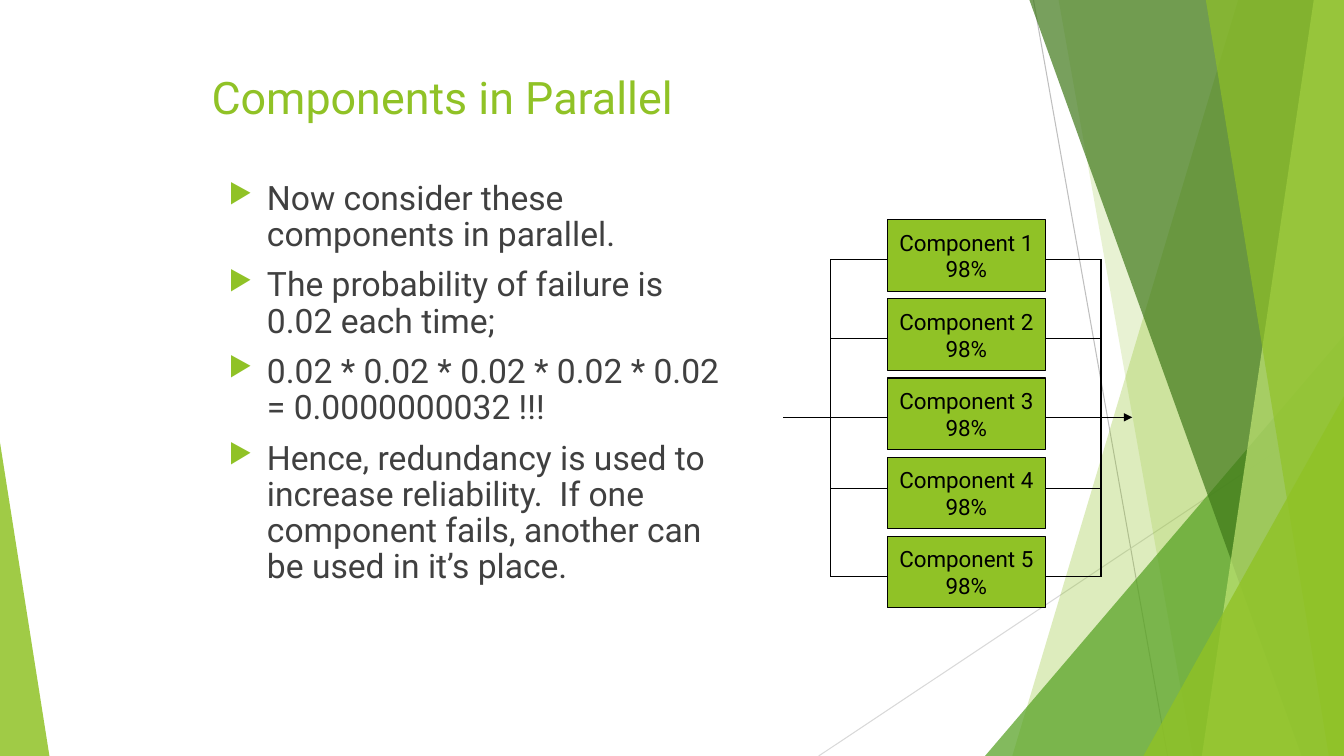
"""Build the slide on components in parallel."""
from dataclasses import dataclass

from lxml import etree
from pptx import Presentation
from pptx import util as u
from pptx.dml.color import RGBColor
from pptx.enum import shapes, text
from pptx.oxml import ns


@dataclass(frozen=True)
class Theme:
    """Colours, font and type sizes."""
    font: str = "Roboto"
    lime: str = "90C226"
    pale: str = "C0E474"
    leaf: str = "54A021"
    moss: str = "3F7819"
    ink: str = "000000"
    body: str = "404040"
    rule: str = "BFBFBF"
    faint: str = "D9D9D9"
    head: int = 32
    item: int = 24
    label: int = 16
    line: float = 0.75


def rgb(hue):
    """Turn a hex string into a colour."""
    return RGBColor.from_string(hue)


def add(node, tag, **attrs):
    """Append a DrawingML element."""
    return etree.SubElement(node, ns.qn(tag), attrs)


class Deck:
    """Hold the theme and the current slide."""

    def __init__(self, theme):
        """Open a wide deck with one blank slide."""
        self.theme = theme
        self.prs = Presentation()
        self.prs.slide_width = u.Inches(13.33)
        self.prs.slide_height = u.Inches(7.5)
        self.slide = self.prs.slides.add_slide(self.prs.slide_layouts[6])
        self.items = self.slide.shapes

    def style(self, para, size, hue):
        """Set the font of a paragraph."""
        para.font.name = self.theme.font
        para.font.size = u.Pt(size)
        para.font.color.rgb = rgb(hue)

    def tint(self, shape, hue, alpha):
        """Fill a shape with a see-through colour and no line."""
        shape.shadow.inherit = False
        shape.line.fill.background()
        shape.fill.solid()
        shape.fill.fore_color.rgb = rgb(hue)
        tone = shape.fill._xPr.find(".//" + ns.qn("a:srgbClr"))
        add(tone, "a:alpha", val=str(alpha * 1000))

    def shard(self, pts, hue, alpha):
        """Draw a see-through polygon."""
        first, *rest = [(u.Inches(x), u.Inches(y)) for x, y in pts]
        form = self.items.build_freeform(*first)
        form.add_line_segments(rest, close=True)
        self.tint(form.convert_to_shape(), hue, alpha)

    def wedge(self, box, apex, hue, alpha):
        """Draw a see-through triangle with its apex at one side."""
        shape = self.items.add_shape(
            shapes.MSO_SHAPE.ISOSCELES_TRIANGLE, *map(u.Inches, box))
        shape.adjustments[0] = apex
        self.tint(shape, hue, alpha)

    def wire(self, start, end, hue=None, arrow=False):
        """Draw a straight line, with an arrowhead if asked."""
        line = self.items.add_connector(
            shapes.MSO_CONNECTOR.STRAIGHT, *map(u.Inches, (*start, *end)))
        line.line.width = u.Pt(self.theme.line)
        line.line.color.rgb = rgb(hue or self.theme.ink)
        if arrow:
            add(line.line._get_or_add_ln(), "a:tailEnd", type="triangle")
        add(line._element.spPr, "a:effectLst")

    def frame(self, box):
        """Add a wrapping text box."""
        frame = self.items.add_textbox(*map(u.Inches, box)).text_frame
        frame.word_wrap = True
        return frame

    def title(self, box, words):
        """Add the heading."""
        frame = self.frame(box)
        frame.vertical_anchor = text.MSO_ANCHOR.MIDDLE
        frame.text = words
        self.style(frame.paragraphs[0], self.theme.head, self.theme.lime)

    def bullets(self, box, lines):
        """Add the bullet list."""
        frame = self.frame(box)
        frame.text = "\n".join(lines)
        for para in frame.paragraphs:
            para.line_spacing = 0.9
            para.space_before = u.Pt(10)
            props = para._p.get_or_add_pPr()
            dent = u.Inches(0.38)
            props.set("marL", str(dent))
            props.set("indent", str(-dent))
            add(add(props, "a:buClr"), "a:srgbClr", val=self.theme.lime)
            add(props, "a:buSzPct", val="80000")
            add(props, "a:buChar", char="▶")
            self.style(para, self.theme.item, self.theme.body)

    def block(self, box, words):
        """Add a labelled component."""
        shape = self.items.add_shape(
            shapes.MSO_SHAPE.RECTANGLE, *map(u.Inches, box))
        shape.shadow.inherit = False
        shape.fill.solid()
        shape.fill.fore_color.rgb = rgb(self.theme.lime)
        shape.line.color.rgb = rgb(self.theme.ink)
        shape.line.width = u.Pt(self.theme.line)
        frame = shape.text_frame
        frame.word_wrap = False
        frame.vertical_anchor = text.MSO_ANCHOR.MIDDLE
        frame.text = words
        for para in frame.paragraphs:
            para.alignment = text.PP_ALIGN.CENTER
            self.style(para, self.theme.label, self.theme.ink)


def decor(deck):
    """Draw the green backdrop."""
    hue = deck.theme
    deck.wire((10.25, 0), (11.58, 7.5), hue.rule)
    deck.wire((13.33, 4.03), (8.12, 7.5), hue.faint)

    def slab(top, foot, tone, alpha):
        """Fill from a slanted edge to the right side."""
        deck.shard([(top, 0), (13.33, 0), (13.33, 7.5), (foot, 7.5)],
                   tone, alpha)

    slab(12.28, 10.04, hue.lime, 30)
    slab(10.5, 11.83, hue.lime, 20)
    deck.wedge((9.77, 3.33, 3.56, 4.17), 1, hue.leaf, 72)
    slab(10.21, 12.91, hue.moss, 70)
    slab(13.03, 11.92, hue.pale, 70)
    slab(11.96, 13.18, hue.lime, 65)
    deck.wedge((11.34, 3.93, 1.99, 3.57), 1, hue.lime, 80)
    deck.wedge((0, 4.39, 0.49, 3.11), 0, hue.lime, 85)


def circuit(deck):
    """Draw five parallel components and their wires."""
    left, wide, high, step = 8.8, 1.57, 0.71, 0.785
    right = left + wide
    rows = (2.57, 3.36, 4.14, 4.85, 5.72)
    rails = (8.24, 10.92)
    for i, y in enumerate(rows):
        deck.block((left, 2.18 + i * step, wide, high),
                   f"Component {i + 1}\n98%")
        deck.wire((rails[0], y), (left, y))
        deck.wire((right, y), (rails[1], y))
    for x in rails:
        deck.wire((x, rows[0]), (x, rows[-1]))
    mid = rows[2]
    deck.wire((7.77, mid), (8.32, mid))
    deck.wire((rails[1], mid), (11.23, mid), arrow=True)


def main():
    """Build and save the slide."""
    deck = Deck(Theme())
    decor(deck)
    deck.title((2, 0.5, 9.5, 0.92), "Components in Parallel")
    deck.bullets((2.17, 1.75, 5.13, 5.07), [
        "Now consider these components in parallel.",
        "The probability of failure is 0.02 each time;",
        "0.02 * 0.02 * 0.02 * 0.02 * 0.02 = 0.0000000032 !!!",
        "Hence, redundancy is used to increase reliability.  If one "
        "component fails, another can be used in it’s place.",
    ])
    circuit(deck)
    deck.prs.save("out.pptx")


if __name__ == "__main__":
    main()
